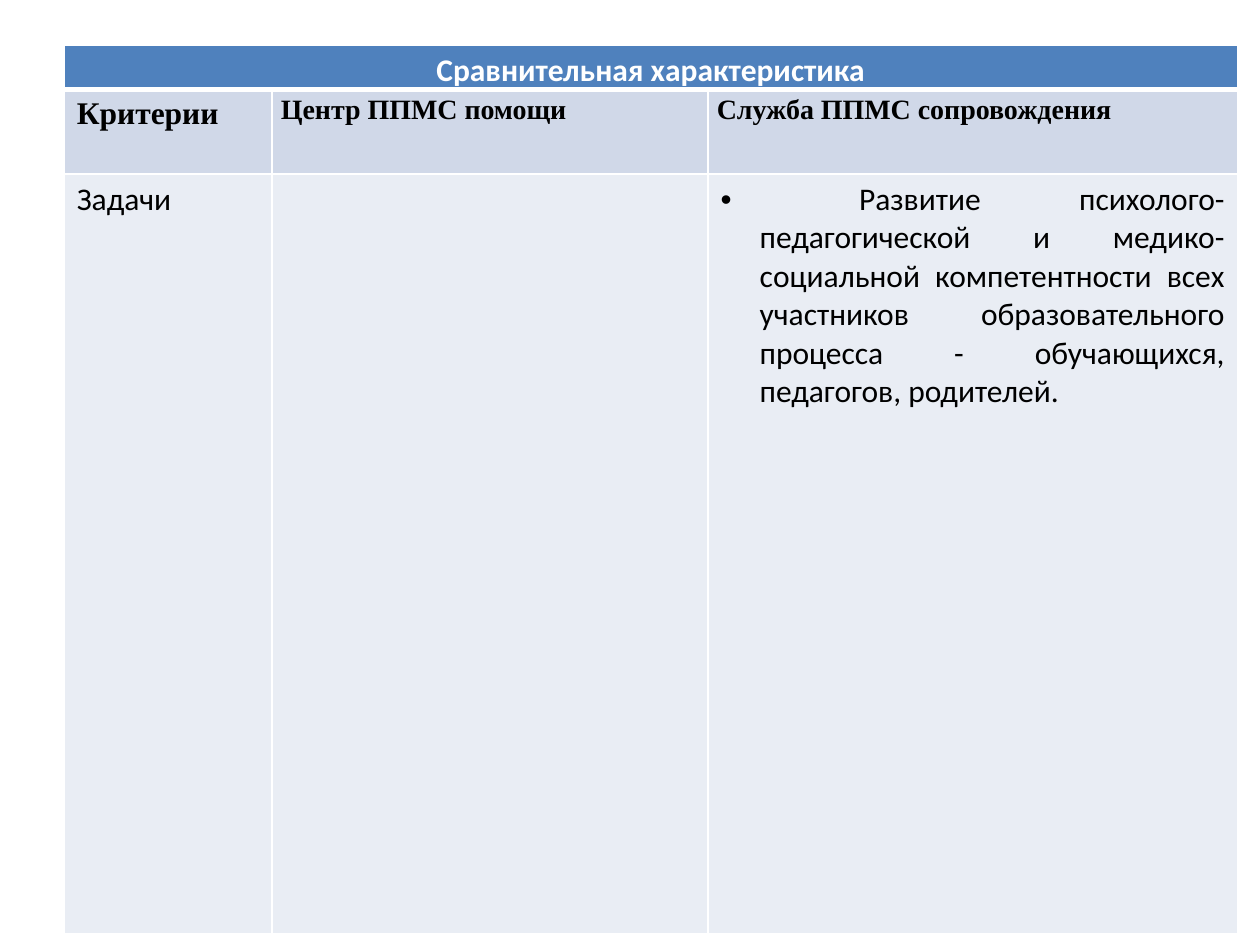
from dataclasses import dataclass

from lxml.etree import SubElement
from pptx import Presentation
from pptx.dml.color import RGBColor
from pptx.enum.text import PP_ALIGN
from pptx.oxml import parse_xml
from pptx.oxml.ns import nsdecls, qn
from pptx.table import _Cell
from pptx.util import Inches, Pt


@dataclass(frozen=True)
class Theme:
    title_fill: str = "4F81BD"
    header_fill: str = "D0D8E8"
    body_fill: str = "E9EDF4"
    light: str = "FFFFFF"
    dark: str = "000000"
    sans: str = "Calibri"
    serif: str = "Times New Roman"
    large: int = 18
    medium: int = 16
    thin_line: float = 1
    thick_line: float = 3


THEME = Theme()


@dataclass(frozen=True)
class Span:
    text: str
    font: str = THEME.sans
    size: int = THEME.large
    bold: bool = False
    color: str = THEME.dark


@dataclass(frozen=True)
class CellText:
    spans: tuple[Span, ...] = ()
    align: PP_ALIGN = PP_ALIGN.LEFT
    line_spacing: float = 1.0
    tight: bool = False
    bullet: bool = False


@dataclass(frozen=True)
class Row:
    height: float
    fill: str
    cells: tuple[CellText, ...]
    bottom_line: float = THEME.thin_line


def column_header(text: str) -> CellText:
    span = Span(text, THEME.serif, THEME.medium, bold=True)
    return CellText((span,), PP_ALIGN.JUSTIFY, 1.15, tight=True)


COLUMN_WIDTHS = (1.65, 3.46, 4.2)
ROWS = (
    Row(0.31, THEME.title_fill, (
        CellText((Span("Сравнительная характеристика", bold=True, color=THEME.light),),
                 PP_ALIGN.CENTER, 1.15, tight=True),
        CellText(),
        CellText(),
    ), THEME.thick_line),
    Row(0.67, THEME.header_fill, (
        CellText((Span("Критерии", THEME.serif, bold=True),)),
        column_header("Центр ППМС помощи"),
        column_header("Служба ППМС сопровождения"),
    )),
    Row(6.03, THEME.body_fill, (
        CellText((Span("Задачи"),)),
        CellText(),
        CellText((
            Span(" ", THEME.serif),
            Span("Развитие психолого-педагогической и медико-социальной "
                 "компетентности всех участников образовательного процесса - "
                 "обучающихся, педагогов, родителей."),
        ), PP_ALIGN.JUSTIFY, bullet=True),
    )),
)


def set_borders(cell: _Cell, top: float, bottom: float) -> None:
    properties = cell._tc.get_or_add_tcPr()
    widths = {"L": THEME.thin_line, "R": THEME.thin_line, "T": top, "B": bottom}
    for position, (side, width) in enumerate(widths.items()):
        line = parse_xml(
            f'<a:ln{side} {nsdecls("a")} w="{Pt(width)}"><a:solidFill>'
            f'<a:srgbClr val="{THEME.light}"/></a:solidFill></a:ln{side}>'
        )
        properties.insert(position, line)


def write_cell(cell: _Cell, content: CellText) -> None:
    if content.tight:
        cell.margin_left = cell.margin_right = Inches(0.07)
        cell.margin_top = cell.margin_bottom = 0
    para = cell.text_frame.paragraphs[0]
    para.alignment = content.align
    para.line_spacing = content.line_spacing
    if content.bullet:
        properties = para._p.get_or_add_pPr()
        properties.set("marL", str(Inches(0.31)))
        properties.set("indent", str(Inches(-0.31)))
        SubElement(properties, qn("a:buFont"), typeface="Arial")
        SubElement(properties, qn("a:buChar"), char="•")
    for span in content.spans:
        run = para.add_run()
        run.text = span.text
        run.font.name = span.font
        run.font.size = Pt(span.size)
        run.font.bold = span.bold
        run.font.color.rgb = RGBColor.from_string(span.color)


def main() -> None:
    deck = Presentation()
    deck.slide_width, deck.slide_height = Inches(10), Inches(7.5)
    page = deck.slides.add_slide(deck.slide_layouts[6])

    # Table grid
    table = page.shapes.add_table(
        len(ROWS), len(COLUMN_WIDTHS), Inches(0.51), Inches(0.36),
        Inches(sum(COLUMN_WIDTHS)), Inches(sum(row.height for row in ROWS)),
    ).table
    for column, width in zip(table.columns, COLUMN_WIDTHS):
        column.width = Inches(width)

    # Cell contents, fills and rules
    top_line = THEME.thin_line
    for row_index, row in enumerate(ROWS):
        table.rows[row_index].height = Inches(row.height)
        for column_index, content in enumerate(row.cells):
            cell = table.cell(row_index, column_index)
            cell.fill.solid()
            cell.fill.fore_color.rgb = RGBColor.from_string(row.fill)
            set_borders(cell, top_line, row.bottom_line)
            write_cell(cell, content)
        top_line = row.bottom_line

    # Title across all columns
    table.cell(0, 0).merge(table.cell(0, len(COLUMN_WIDTHS) - 1))

    deck.save("out.pptx")


if __name__ == "__main__":
    main()
